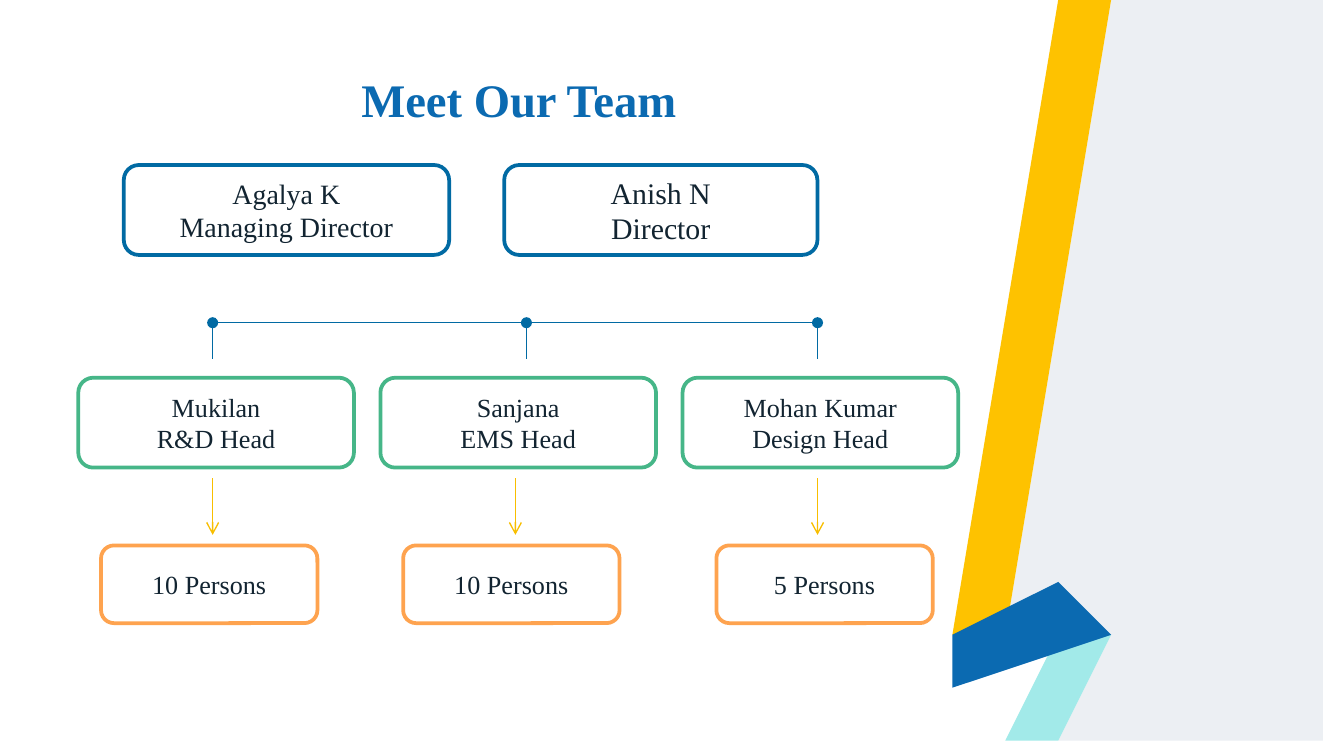
"""Build the team chart slide."""
from lxml import etree
from pptx import Presentation
from pptx.dml.color import RGBColor
from pptx.enum.shapes import MSO_CONNECTOR, MSO_SHAPE
from pptx.enum.text import MSO_ANCHOR, PP_ALIGN
from pptx.oxml.ns import qn
from pptx.util import Cm, Pt

ROUND = MSO_SHAPE.ROUNDED_RECTANGLE
LINE = MSO_CONNECTOR.STRAIGHT
MIDDLE, TOP = MSO_ANCHOR.MIDDLE, MSO_ANCHOR.TOP
CENTER, LEFT = PP_ALIGN.CENTER, PP_ALIGN.LEFT
FONT = "Times New Roman"
NAVY, BLUE, GREEN = "016AA3", "0B6AB1", "46B688"
ORANGE, GOLD, INK = "FEA34F", "F8BE00", "122431"


def color(code):
    """Turn a hex string into a colour."""
    return RGBColor.from_string(code)


def link(start, stop, code, end=None, kind=None):
    """Draw a thin line, with an optional end mark."""
    line = slide.shapes.add_connector(LINE, *map(Cm, start + stop))
    line.line.color.rgb = color(code)
    line.line.width = Pt(0.75)
    if end:
        mark = etree.SubElement(line.line._get_or_add_ln(), qn(f"a:{end}"))
        mark.set("type", kind)
    etree.SubElement(line._element.spPr, qn("a:effectLst"))


deck = Presentation()
deck.slide_width, deck.slide_height = Cm(25.4), Cm(14.29)
slide = deck.slides.add_slide(deck.slide_layouts[5])

bands = [
    ("ECEFF3", [(20.65, 0), (18.62, 11.53), (20.12, 10.95), (20.9, 11.66),
                (20.42, 14.29), (25.4, 14.29), (25.4, 0)]),
    ("FEC200", [(19.69, 0), (20.65, 0), (18.62, 11.58), (17.58, 11.96)]),
    ("A2EAE9", [(19.46, 14.29), (19.89, 12.04), (20.9, 11.66), (20.42, 14.29)]),
    (BLUE, [(17.58, 11.96), (20.12, 10.95), (20.9, 11.66), (18.39, 12.67)]),
]
for code, points in bands:
    path = slide.shapes.build_freeform(*points[0], scale=Cm(1))
    path.add_line_segments(points[1:])
    band = path.convert_to_shape()
    band.shadow.inherit = False
    band.fill.solid()
    band.fill.fore_color.rgb = color(code)
    band.line.fill.background()

title = slide.shapes.title
title.left, title.top, title.width, title.height = map(Cm, (6.35, 1.22, 7.42, 2.39))
frame = title.text_frame
frame.text = "Meet Our Team"
frame.vertical_anchor = TOP
frame.margin_left = Cm(0.48)
head = frame.paragraphs[0]
head.alignment = LEFT
head.font.name, head.font.size, head.font.bold = FONT, Pt(25), True
head.font.color.rgb = color(BLUE)

rows = [
    (3.12, 1.7, NAVY, [(2.34, 6.15, 15, "Agalya K\nManaging Director"),
                       (9.53, 5.92, 16, "Anish N\nDirector")]),
    (7.14, 1.7, GREEN, [(1.48, 5.21, 14, "Mukilan\nR&D Head"),
                        (7.19, 5.21, 14, "Sanjana\nEMS Head"),
                        (12.9, 5.21, 14, "Mohan Kumar\nDesign Head")]),
    (10.31, 1.47, ORANGE, [(1.91, 4.09, 14, "10 Persons"),
                           (7.62, 4.09, 14, "10 Persons"),
                           (13.54, 4.09, 14, "5 Persons")]),
]
for top, height, code, cards in rows:
    for left, width, size, text in cards:
        card = slide.shapes.add_shape(ROUND, *map(Cm, (left, top, width, height)))
        card.shadow.inherit = False
        card.fill.background()
        card.line.color.rgb = color(code)
        card.line.width = Pt(2)
        frame = card.text_frame
        frame.text = text
        frame.word_wrap = True
        frame.vertical_anchor = MIDDLE
        for para in frame.paragraphs:
            para.alignment = CENTER
            para.font.name, para.font.size = FONT, Pt(size)
            para.font.color.rgb = color(INK)

link((4.02, 6.1), (15.45, 6.1), NAVY)
for stem, arrow in [(4.02, 4.02), (9.95, 9.74), (15.45, 15.45)]:
    link((stem, 6.1), (stem, 6.78), NAVY, "headEnd", "oval")
    link((arrow, 9.04), (arrow, 10.11), GOLD, "tailEnd", "arrow")

deck.save("out.pptx")
